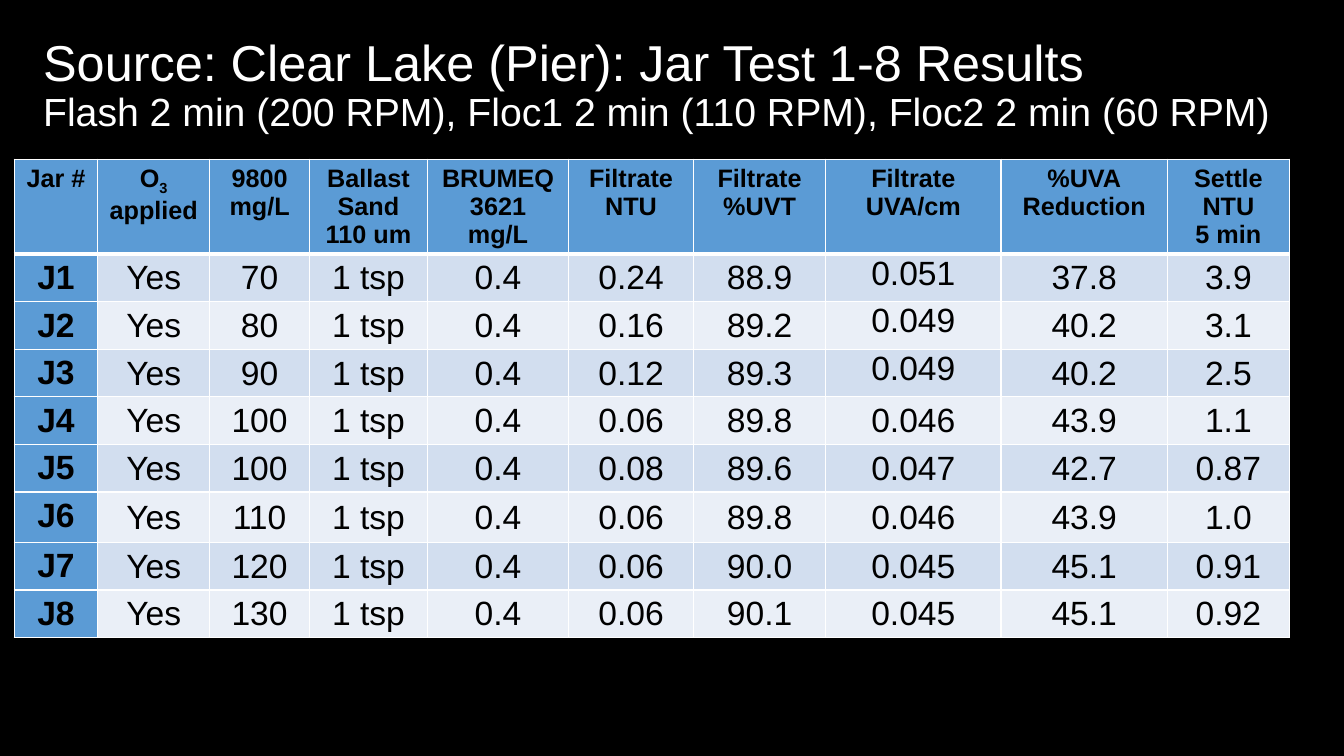
from lxml import etree
from pptx import Presentation
from pptx.dml.color import RGBColor
from pptx.enum.text import MSO_ANCHOR, PP_ALIGN
from pptx.oxml.ns import qn
from pptx.util import Inches, Pt

CENTER = PP_ALIGN.CENTER
TOP = MSO_ANCHOR.TOP
MIDDLE = MSO_ANCHOR.MIDDLE

FONT = "Arial"
BLACK, WHITE = "000000", "FFFFFF"
HEADER_FILL = "5B9BD5"
BAND_FILLS = ("D2DEEF", "EAEFF7")
COLUMN_WIDTHS = (0.83, 1.11, 0.99, 1.17, 1.4, 1.24, 1.31, 1.74, 1.65, 1.21)
HEADER_HEIGHT, ROW_HEIGHT, TALL_ROW_HEIGHT = 0.93, 0.47, 0.5
TALL_JAR = "J6"
UVA_COLUMN = 7
TOP_ALIGNED_JARS = ("J1", "J2", "J3")

TITLE_LINES = (
    ("Source: Clear Lake (Pier): Jar Test 1-8 Results", 36),
    ("Flash 2 min (200 RPM), Floc1 2 min (110 RPM), Floc2 2 min (60 RPM)", 28),
)
HEADERS = (
    "Jar #", "O\napplied", "9800\nmg/L", "Ballast\nSand\n110 um",
    "BRUMEQ\n3621\nmg/L", "Filtrate\nNTU", "Filtrate\n%UVT",
    "Filtrate\nUVA/cm", "%UVA\nReduction", "Settle\nNTU\n5 min",
)
JARS = (
    ("J1", "Yes", "70", "1 tsp", "0.4", "0.24", "88.9", "0.051", "37.8", "3.9"),
    ("J2", "Yes", "80", "1 tsp", "0.4", "0.16", "89.2", "0.049", "40.2", "3.1"),
    ("J3", "Yes", "90", "1 tsp", "0.4", "0.12", "89.3", "0.049", "40.2", "2.5"),
    ("J4", "Yes", "100", "1 tsp", "0.4", "0.06", "89.8", "0.046", "43.9", "1.1"),
    ("J5", "Yes", "100", "1 tsp", "0.4", "0.08", "89.6", "0.047", "42.7", "0.87"),
    ("J6", "Yes", "110", "1 tsp", "0.4", "0.06", "89.8", "0.046", "43.9", "1.0"),
    ("J7", "Yes", "120", "1 tsp", "0.4", "0.06", "90.0", "0.045", "45.1", "0.91"),
    ("J8", "Yes", "130", "1 tsp", "0.4", "0.06", "90.1", "0.045", "45.1", "0.92"),
)


def color(hex_value):
    """Return the colour for a hex string."""
    return RGBColor.from_string(hex_value)


def format_run(run, size, hex_value, bold=False):
    """Set the font of one run."""
    run.font.name = FONT
    run.font.size = Pt(size)
    run.font.bold = bold
    run.font.color.rgb = color(hex_value)


def add_title(slide):
    """Add the two-line title."""
    shape = slide.shapes.add_textbox(Inches(0.33), Inches(0.13), Inches(12.47), Inches(1.45))
    text_frame = shape.text_frame
    text_frame.word_wrap = True
    text_frame.vertical_anchor = MIDDLE
    paragraph = text_frame.paragraphs[0]
    paragraph.text = "\v".join(text for text, _ in TITLE_LINES)
    paragraph.line_spacing = 0.9
    for run, (_, size) in zip(paragraph.runs, TITLE_LINES):
        format_run(run, size, WHITE)


def set_borders(cell, top=1, bottom=1):
    """Draw white borders with the given widths in points."""
    properties = cell._tc.get_or_add_tcPr()
    for tag, width in (("a:lnL", 1), ("a:lnR", 1), ("a:lnT", top), ("a:lnB", bottom)):
        line = etree.SubElement(properties, qn(tag), w=str(Pt(width)))
        fill = etree.SubElement(line, qn("a:solidFill"))
        etree.SubElement(fill, qn("a:srgbClr"), val=WHITE)


def fill_cell(cell, text, fill, size, bold):
    """Set the text and background of a table cell."""
    cell.text_frame.text = text
    for paragraph in cell.text_frame.paragraphs:
        paragraph.alignment = CENTER
        for run in paragraph.runs:
            format_run(run, size, BLACK, bold)
    cell.fill.solid()
    cell.fill.fore_color.rgb = color(fill)


def add_subscript(paragraph, text):
    """Append a subscript run to a header paragraph."""
    run = paragraph.add_run()
    run.text = text
    format_run(run, 18, BLACK, True)
    run._r.get_or_add_rPr().set("baseline", "-25000")


def place_value(cell, anchor):
    """Set tight margins and the anchor of a value cell."""
    cell.margin_left = cell.margin_right = cell.margin_top = Inches(0.01)
    cell.margin_bottom = 0
    cell.vertical_anchor = anchor


def add_results_table(slide):
    """Add the table of jar test results."""
    heights = [HEADER_HEIGHT]
    heights += [TALL_ROW_HEIGHT if jar[0] == TALL_JAR else ROW_HEIGHT for jar in JARS]
    table = slide.shapes.add_table(
        len(heights), len(COLUMN_WIDTHS), Inches(0.14), Inches(1.58),
        Inches(sum(COLUMN_WIDTHS)), Inches(sum(heights))).table
    for column, width in zip(table.columns, COLUMN_WIDTHS):
        column.width = Inches(width)
    for row, height in zip(table.rows, heights):
        row.height = Inches(height)
    for index, header in enumerate(HEADERS):
        cell = table.cell(0, index)
        set_borders(cell, bottom=3)
        fill_cell(cell, header, HEADER_FILL, 18, True)
    add_subscript(table.cell(0, 1).text_frame.paragraphs[0], "3")
    for row_index, jar in enumerate(JARS, 1):
        for index, value in enumerate(jar):
            cell = table.cell(row_index, index)
            is_label = index == 0
            set_borders(cell, top=3 if row_index == 1 else 1)
            fill = HEADER_FILL if is_label else BAND_FILLS[(row_index - 1) % 2]
            fill_cell(cell, value, fill, 24, is_label)
            if not is_label:
                is_top = index == UVA_COLUMN and jar[0] in TOP_ALIGNED_JARS
                place_value(cell, TOP if is_top else MIDDLE)


def main():
    """Build and save the slide."""
    presentation = Presentation()
    presentation.slide_width = Inches(13.33)
    presentation.slide_height = Inches(7.5)
    slide = presentation.slides.add_slide(presentation.slide_layouts[6])
    slide.background.fill.solid()
    slide.background.fill.fore_color.rgb = color(BLACK)
    add_results_table(slide)
    add_title(slide)
    presentation.save("out.pptx")


if __name__ == "__main__":
    main()
